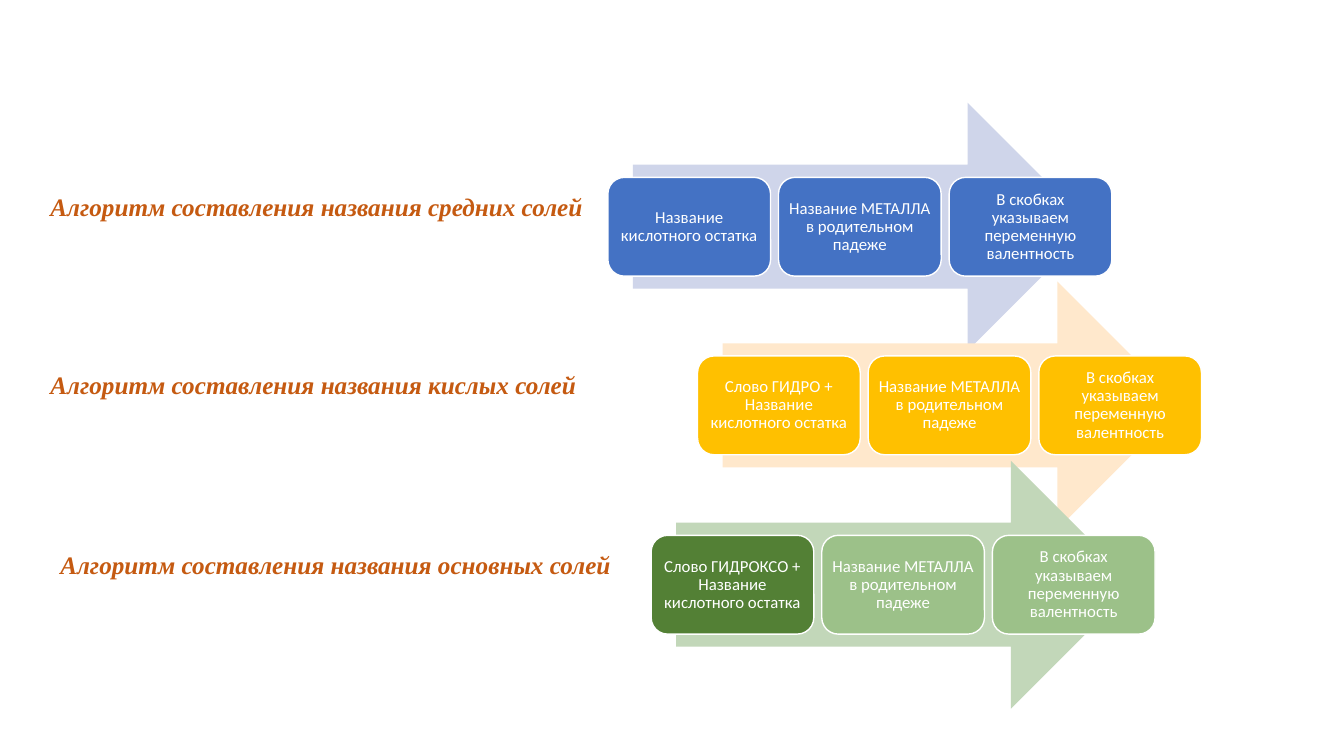
from dataclasses import dataclass

from pptx import Presentation
from pptx.dml.color import RGBColor
from pptx.enum.shapes import MSO_SHAPE
from pptx.enum.text import MSO_ANCHOR, MSO_AUTO_SIZE, PP_ALIGN
from pptx.util import Cm, Pt

ARROW = MSO_SHAPE.RIGHT_ARROW
CARD = MSO_SHAPE.ROUNDED_RECTANGLE
MIDDLE = MSO_ANCHOR.MIDDLE
CENTER = PP_ALIGN.CENTER
FIT = MSO_AUTO_SIZE.SHAPE_TO_FIT_TEXT


@dataclass(frozen=True)
class Theme:
    white: str = "FFFFFF"
    title: str = "C55A11"
    blue: str = "4472C4"
    pale_blue: str = "CFD5EA"
    gold: str = "FFC000"
    pale_gold: str = "FFE8CC"
    dark_green: str = "538035"
    green: str = "9CC189"
    pale_green: str = "C2D7B9"
    title_font: str = "Times New Roman"
    card_font: str = "Calibri"
    title_size: int = 18
    card_size: int = 12


THEME = Theme()
TITLE = {"name": THEME.title_font, "size": Pt(THEME.title_size),
         "bold": True, "italic": True}
LABEL = {"name": THEME.card_font, "size": Pt(THEME.card_size)}
INSETS = dict.fromkeys(
    ("margin_left", "margin_top", "margin_right", "margin_bottom"), Cm(0.12))

# Lengths in cm
ARROW_W, ARROW_H = 11.56, 6.25
CARD_W, CARD_H = 4.1, 2.49
STEP = 4.3
INDENT = 0.63
TITLE_DROP, TITLE_H = 2.1, 1.02

METAL = "Название МЕТАЛЛА в родительном падеже"
VALENCE = "В скобках указываем переменную валентность"

# Title, its left and width, row left and top, arrow colour, cards
ROWS = [
    ("Алгоритм составления названия средних солей", 1.02, 14.22,
     15.32, 2.59, THEME.pale_blue,
     [("Название кислотного остатка", THEME.blue),
      (METAL, THEME.blue), (VALENCE, THEME.blue)]),
    ("Алгоритм составления названия кислых солей", 1.02, 14.05,
     17.58, 7.09, THEME.pale_gold,
     [("Слово ГИДРО + Название кислотного остатка", THEME.gold),
      (METAL, THEME.gold), (VALENCE, THEME.gold)]),
    ("Алгоритм составления названия основных солей", 1.27, 14.68,
     16.41, 11.61, THEME.pale_green,
     [("Слово ГИДРОКСО + Название кислотного остатка", THEME.dark_green),
      (METAL, THEME.green), (VALENCE, THEME.green)]),
]


def set_all(target, values):
    for name, value in values.items():
        setattr(target, name, value)


def write(frame, text, style, color):
    para = frame.paragraphs[0]
    run = para.add_run()
    run.text = text
    set_all(run.font, style)
    run.font.color.rgb = RGBColor.from_string(color)
    return para


def add_form(shapes, kind, box, fill):
    form = shapes.add_shape(kind, *map(Cm, box))
    form.shadow.inherit = False
    form.fill.solid()
    form.fill.fore_color.rgb = RGBColor.from_string(fill)
    form.line.fill.background()
    return form


def add_card(shapes, box, text, fill):
    card = add_form(shapes, CARD, box, fill)
    card.line.color.rgb = RGBColor.from_string(THEME.white)
    card.line.width = Pt(1)
    frame = card.text_frame
    set_all(frame, {**INSETS, "word_wrap": True, "vertical_anchor": MIDDLE})
    para = write(frame, text, LABEL, THEME.white)
    set_all(para, {"alignment": CENTER, "line_spacing": 0.9})


def add_flow(slide, left, top, tint, cards):
    """Draw an arrow with its cards centred on the shaft."""
    shapes = slide.shapes.add_group_shape().shapes
    add_form(shapes, ARROW, (left + INDENT, top, ARROW_W, ARROW_H), tint)
    card_top = top + (ARROW_H - CARD_H) / 2
    for i, (text, fill) in enumerate(cards):
        box = (left + i * STEP, card_top, CARD_W, CARD_H)
        add_card(shapes, box, text, fill)


def add_title(slide, box, text):
    frame = slide.shapes.add_textbox(*map(Cm, box)).text_frame
    set_all(frame, {"word_wrap": False, "auto_size": FIT})
    write(frame, text, TITLE, THEME.title)


def main():
    deck = Presentation()
    set_all(deck, {"slide_width": Cm(33.87), "slide_height": Cm(19.05)})
    slide = deck.slides.add_slide(deck.slide_layouts[6])
    for title, title_left, width, left, top, tint, cards in ROWS:
        add_flow(slide, left, top, tint, cards)
        add_title(slide, (title_left, top + TITLE_DROP, width, TITLE_H), title)
    deck.save("out.pptx")


if __name__ == "__main__":
    main()
